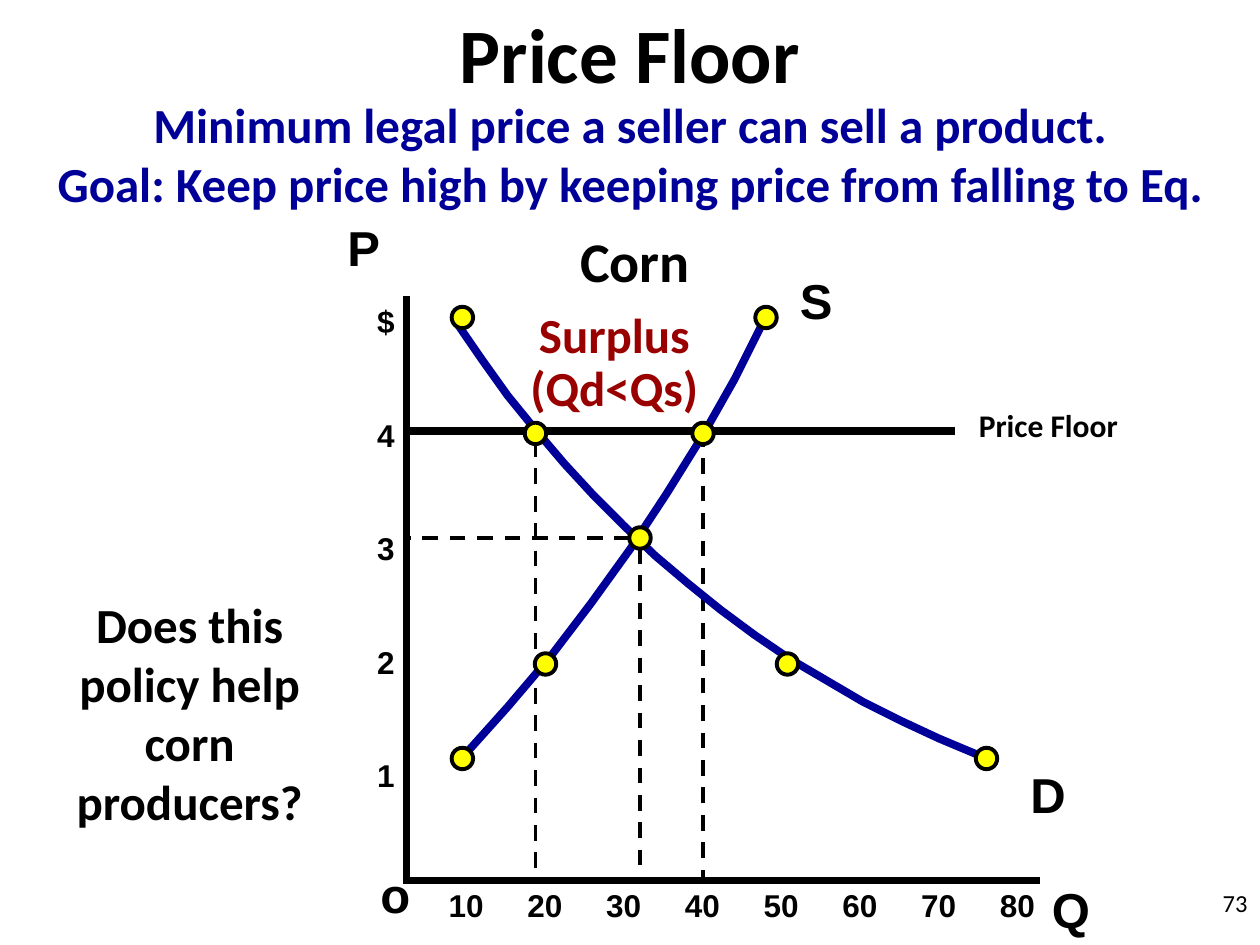
from dataclasses import dataclass

from lxml.etree import SubElement
from pptx import Presentation
from pptx.dml.color import RGBColor
from pptx.enum.dml import MSO_LINE
from pptx.enum.shapes import MSO_CONNECTOR, MSO_SHAPE
from pptx.enum.text import MSO_ANCHOR, PP_ALIGN
from pptx.oxml.ns import qn
from pptx.util import Inches, Pt


@dataclass(frozen=True)
class Theme:
    ink: str = "000000"
    navy: str = "000099"
    red: str = "990000"
    yellow: str = "FFFF00"
    body: str = "Calibri"
    label: str = "Arial"
    title: int = 44
    subtitle: int = 32
    large: int = 28
    small: int = 18
    number: int = 14
    curve: float = 4.5
    axis: float = 4
    thin: float = 2.25


THEME = Theme()
WIDTH, HEIGHT = 10, 7.5
LEFT, CENTER, RIGHT = PP_ALIGN.LEFT, PP_ALIGN.CENTER, PP_ALIGN.RIGHT

# Content: text, (left, top, width, height), size, colour, alignment, line spacing
BODY_TEXTS = [
    ("Price Floor", (0, 0, WIDTH, 0.83), THEME.title, THEME.ink, CENTER, 1),
    ("Minimum legal price a seller can sell a product.\n"
     "Goal: Keep price high by keeping price from falling to Eq.",
     (0, 0.7, WIDTH, 1.03), THEME.large, THEME.navy, CENTER, 1),
    ("Corn", (3.25, 1.75, 3.58, 0.63), THEME.subtitle, THEME.ink, CENTER, 1),
    ("Surplus\n(Qd<Qs)", (4, 2.42, 1.75, 0.94), THEME.large, THEME.red, CENTER, 0.9),
    ("Does this policy help corn producers?", (0.17, 4.67, 2.67, 1.97),
     THEME.large, THEME.ink, CENTER, 1),
    ("Price Floor", (7.67, 3.17, 2.17, 0.5), THEME.small, THEME.ink, LEFT, 1),
]
PAGE_NUMBER = "73"
LETTERS = [("P", 2.66, 1.68), ("S", 6.25, 2.1), ("D", 8.08, 6.02),
           ("Q", 8.25, 6.93), ("o", 2.92, 6.81)]
PRICES = ["$", "4", "3", "2", "1"]
QUANTITIES = ["10", "20", "30", "40", "50", "60", "70", "80"]

# Diagram geometry in inches
PRICE_TOP, PRICE_STEP = 2.55, 0.9
QUANTITY_LEFT, QUANTITY_STEP = 3.7, 0.625
LABEL_WIDTH, LABEL_HEIGHT = 0.6, 0.4
DOT = 0.17
EQUILIBRIUM = (5.08, 4.27)
DEMAND_DOTS = [(3.67, 2.52), (4.25, 3.44), (6.25, 5.27), (7.83, 6.02)]
SUPPLY_DOTS = [(3.67, 6.02), (4.33, 5.27), (5.58, 3.44), (6.08, 2.52)]
DEMAND = [(3.63, 2.57), (3.83, 2.86), (4.03, 3.14), (4.25, 3.41), (4.48, 3.68),
          (4.71, 3.93), (4.95, 4.17), (5.2, 4.41), (5.46, 4.63), (5.72, 4.84),
          (5.99, 5.04), (6.27, 5.23), (6.56, 5.4), (6.85, 5.57), (7.15, 5.72),
          (7.45, 5.86), (7.76, 5.99)]
SUPPLY = [(3.68, 6), (4.03, 5.61), (4.37, 5.21), (4.69, 4.79), (5, 4.36),
          (5.29, 3.92), (5.57, 3.47), (5.83, 3.01), (6.07, 2.53)]
# start, end, weight, dashed
LINES = [
    ((3.25, 3.42), (7.58, 3.42), THEME.curve, False),
    ((3.23, 2.35), (3.23, 7.02), THEME.axis, False),
    ((3.21, 6.99), (8.25, 6.99), THEME.axis, False),
    ((4.25, 3.5), (4.25, 6.93), THEME.thin, True),
    ((5.58, 3.42), (5.58, 7), THEME.thin, True),
    ((5, 4.27), (3.25, 4.27), THEME.thin, True),
    ((5.08, 4.35), (5.08, 6.93), THEME.thin, True),
]


def color(value):
    return RGBColor.from_string(value)


def add_text(page, text, frame, size, tint=THEME.ink, align=LEFT, spacing=1,
             font=THEME.body, bold=True, wrap=True, anchor=MSO_ANCHOR.TOP):
    box = page.shapes.add_textbox(*map(Inches, frame))
    body = box.text_frame
    body.text = text
    body.word_wrap = wrap
    body.vertical_anchor = anchor
    for para in body.paragraphs:
        para.alignment = align
        para.line_spacing = spacing
        for span in para.runs:
            span.font.name = font
            span.font.size = Pt(size)
            span.font.bold = bold
            span.font.color.rgb = color(tint)


def add_line(page, start, end, weight, dashed):
    line = page.shapes.add_connector(MSO_CONNECTOR.STRAIGHT,
                                     *map(Inches, start + end))
    line.line.color.rgb = color(THEME.ink)
    line.line.width = Pt(weight)
    if dashed:
        line.line.dash_style = MSO_LINE.DASH
    SubElement(line._element.spPr, qn("a:effectLst"))


def add_curve(page, points):
    start, *rest = [(Inches(x), Inches(y)) for x, y in points]
    builder = page.shapes.build_freeform(*start)
    builder.add_line_segments(rest, close=False)
    curve = builder.convert_to_shape()
    curve.shadow.inherit = False
    curve.fill.background()
    curve.line.color.rgb = color(THEME.navy)
    curve.line.width = Pt(THEME.curve)


def add_dot(page, x, y):
    dot = page.shapes.add_shape(MSO_SHAPE.OVAL, Inches(x - DOT / 2),
                                Inches(y - DOT / 2), Inches(DOT), Inches(DOT))
    dot.shadow.inherit = False
    dot.fill.solid()
    dot.fill.fore_color.rgb = color(THEME.yellow)
    dot.line.color.rgb = color(THEME.ink)
    dot.line.width = Pt(THEME.thin)


def add_axis_labels(page):
    style = dict(font=THEME.label, anchor=MSO_ANCHOR.MIDDLE)
    for row, price in enumerate(PRICES):
        top = PRICE_TOP + row * PRICE_STEP - LABEL_HEIGHT / 2
        frame = (3.23 - LABEL_WIDTH, top, LABEL_WIDTH, LABEL_HEIGHT)
        add_text(page, price, frame, THEME.small, align=RIGHT, **style)
    for column, quantity in enumerate(QUANTITIES):
        left = QUANTITY_LEFT + column * QUANTITY_STEP - LABEL_WIDTH / 2
        frame = (left, 6.98, LABEL_WIDTH, LABEL_HEIGHT)
        add_text(page, quantity, frame, THEME.small, align=CENTER, **style)


def main():
    deck = Presentation()
    deck.slide_width, deck.slide_height = Inches(WIDTH), Inches(HEIGHT)
    page = deck.slides.add_slide(deck.slide_layouts[6])

    # Axes, price floor and guides
    for line in LINES:
        add_line(page, *line)
    add_axis_labels(page)

    # Curves with their points
    for points in (DEMAND, SUPPLY):
        add_curve(page, points)
    for x, y in DEMAND_DOTS + SUPPLY_DOTS + [EQUILIBRIUM]:
        add_dot(page, x, y)

    # Letters, headings and notes
    for letter, left, top in LETTERS:
        add_text(page, letter, (left, top, 0.5, 0.57), THEME.large,
                 font=THEME.label, wrap=False)
    for item in BODY_TEXTS:
        add_text(page, *item)
    add_text(page, PAGE_NUMBER, (7.92, 7, 2.08, 0.5), THEME.number,
             align=RIGHT, bold=False)

    deck.save("out.pptx")


if __name__ == "__main__":
    main()
